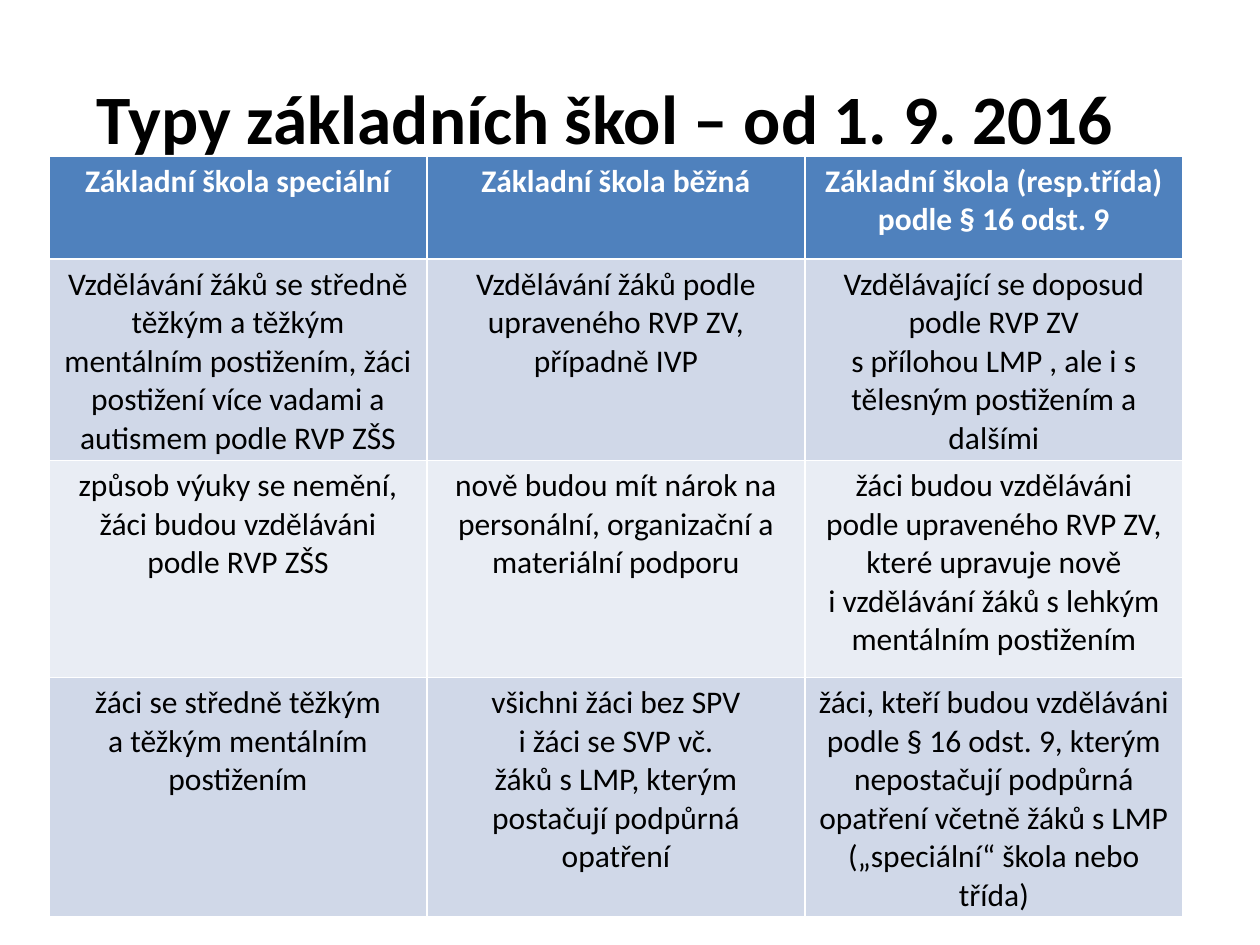
from pptx import Presentation
from pptx import util as u
from pptx.dml.color import RGBColor
from pptx.enum import text

PX = u.Inches(1) // 126
FONT = "Calibri"
COLORS = {
    "black": "000000",
    "white": "FFFFFF",
    "header": "4F81BD",
    "odd": "D0D8E8",
    "even": "E9EDF4",
}
COL_WIDTH = 378
ROW_HEIGHTS = [103, 158, 217, 231]
ROWS = [
    [
        "Základní škola speciální",
        "Základní škola běžná",
        "Základní škola (resp.třída)\npodle § 16 odst. 9",
    ],
    [
        "Vzdělávání žáků se středně těžkým a těžkým mentálním postižením, "
        "žáci postižení více vadami a autismem podle RVP ZŠS",
        "Vzdělávání žáků podle upraveného RVP ZV,\npřípadně IVP",
        "Vzdělávající se doposud podle RVP ZV\n"
        "s přílohou LMP , ale i s tělesným postižením a dalšími",
    ],
    [
        "způsob výuky se nemění, žáci budou vzděláváni podle RVP ZŠS",
        "nově budou mít nárok na personální, organizační a materiální podporu",
        "žáci budou vzděláváni podle upraveného RVP ZV, které upravuje nově\v"
        "i vzdělávání žáků s lehkým mentálním postižením",
    ],
    [
        "žáci se středně těžkým\va těžkým mentálním postižením",
        "všichni žáci bez SPV\vi žáci se SVP vč.\n"
        "žáků s LMP, kterým postačují podpůrná opatření",
        "žáci, kteří budou vzděláváni podle § 16 odst. 9, kterým nepostačují "
        "podpůrná opatření včetně žáků s LMP („speciální“ škola nebo třída)",
    ],
]


def px(n):
    return u.Emu(n * PX)


def rgb(name):
    return RGBColor.from_string(COLORS[name])


def write(tf, content, size, color, bold):
    tf.text = content
    for p in tf.paragraphs:
        p.alignment = text.PP_ALIGN.CENTER
        for r in p.runs:
            r.font.name = FONT
            r.font.size = u.Pt(size)
            r.font.bold = bold
            r.font.color.rgb = rgb(color)


def add_title(s, x, y, w, h):
    tf = s.shapes.add_textbox(px(x), px(y), px(w), px(h)).text_frame
    tf.word_wrap = True
    tf.vertical_anchor = text.MSO_ANCHOR.MIDDLE
    tf.margin_right = px(62)
    write(tf, "Typy základních škol – od 1. 9. 2016", 39.6, "black", True)


def add_school_table(s, x, y):
    cols = len(ROWS[0])
    table = s.shapes.add_table(
        len(ROWS), cols, px(x), px(y), px(cols * COL_WIDTH), px(sum(ROW_HEIGHTS))
    ).table
    for col in table.columns:
        col.width = px(COL_WIDTH)
    for i, (row, height) in enumerate(zip(ROWS, ROW_HEIGHTS)):
        table.rows[i].height = px(height)
        header = i == 0
        fill = "header" if header else "odd" if i % 2 else "even"
        for j, content in enumerate(row):
            cell = table.cell(i, j)
            cell.fill.solid()
            cell.fill.fore_color.rgb = rgb(fill)
            write(cell.text_frame, content, 18, "white" if header else "black", header)


def main():
    prs = Presentation()
    prs.slide_width, prs.slide_height = px(1260), px(945)
    s = prs.slides.add_slide(prs.slide_layouts[6])
    add_title(s, 63, 38, 1134, 158)
    add_school_table(s, 49, 156)
    prs.save("out.pptx")


if __name__ == "__main__":
    main()
